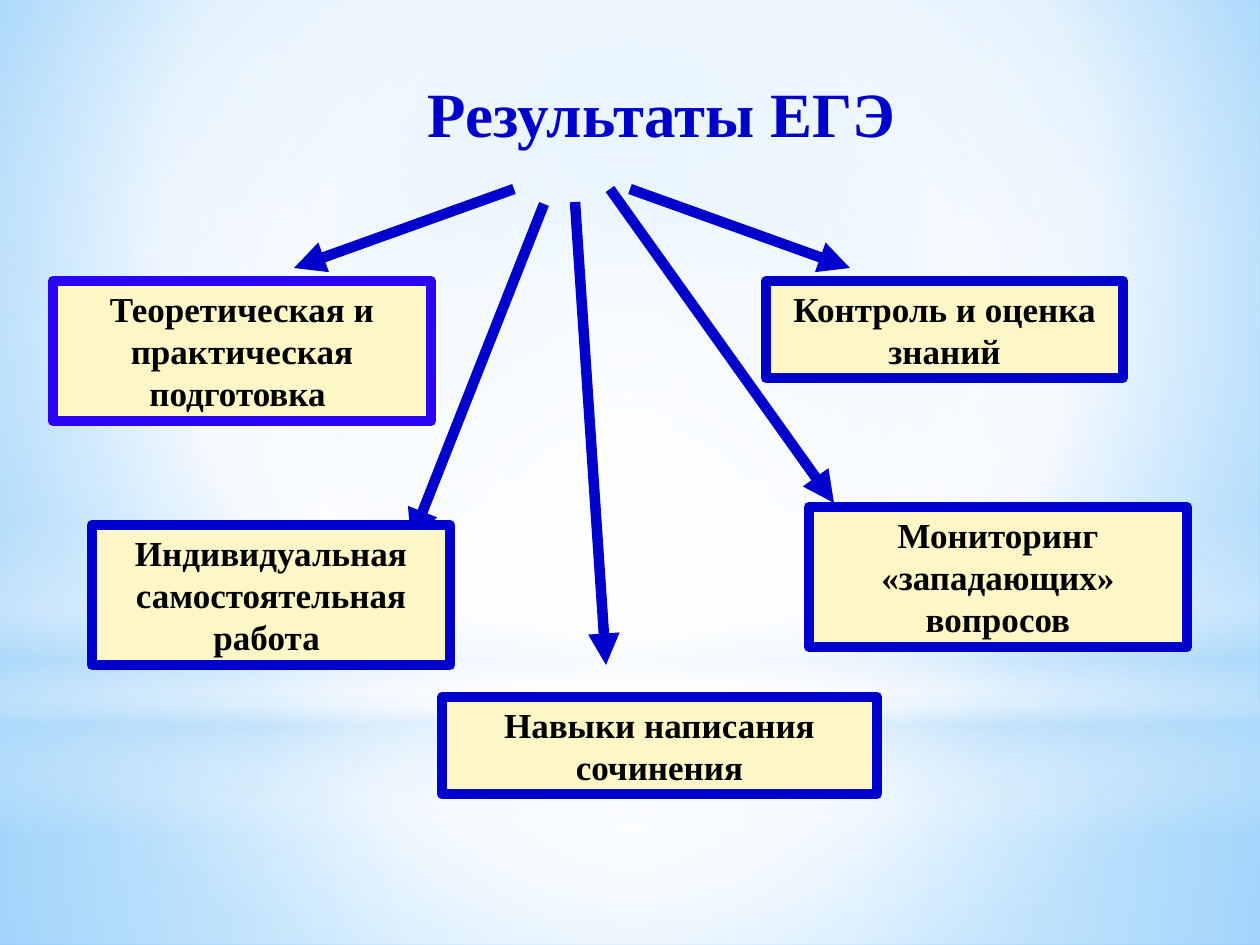
from lxml import etree
from pptx import Presentation
from pptx import util as u
from pptx.dml.color import RGBColor
from pptx.enum import shapes, text
from pptx.oxml import parse_xml
from pptx.oxml.ns import nsdecls, qn

PX = 914400 / 126
FONT = "Times New Roman"
COLORS = {"blue": "0000CC", "violet": "2B03F5", "cream": "FDF7C7", "black": "000000",
          "white": "FFFFFF", "pale": "B4DCFA", "sky": "9ED5FF", "deep": "5BB9FF"}


def gradient(stops, focus):
    marks = "".join(
        f'<a:gs pos="{pos * 1000}"><a:srgbClr val="{COLORS[color]}">'
        f'<a:alpha val="{alpha * 1000}"/></a:srgbClr></a:gs>'
        for pos, color, alpha in stops)
    if focus:
        sides = " ".join(f'{side}="{part * 1000}"' for side, part in zip("ltrb", focus))
        direction = f'<a:path path="circle"><a:fillToRect {sides}/></a:path>'
    else:
        direction = '<a:lin ang="5400000" scaled="0"/>'
    return parse_xml(f'<a:gradFill {nsdecls("a")} rotWithShape="1">'
                     f'<a:gsLst>{marks}</a:gsLst>{direction}</a:gradFill>')


def write(frame, words, size, color, formats):
    for key, value in formats.items():
        setattr(frame, key, value)
    paragraph = frame.paragraphs[0]
    paragraph.alignment = text.PP_ALIGN.CENTER
    run = paragraph.add_run()
    run.text = words
    for key, value in {"name": FONT, "size": u.Pt(size), "bold": True}.items():
        setattr(run.font, key, value)
    run.font.color.rgb = RGBColor.from_string(COLORS[color])


prs = Presentation()
prs.slide_width, prs.slide_height = round(1260 * PX), round(945 * PX)
slide = prs.slides.add_slide(prs.slide_layouts[5])

backdrop = slide.background.fill
backdrop.gradient()
old_fill = slide.background._cSld.find(".//" + qn("a:gradFill"))
old_fill.getparent().replace(old_fill, gradient(
    [(0, "sky", 100), (60, "white", 100), (100, "deep", 100)], (20, 10, 20, 60)))

RECT, OVAL = shapes.MSO_SHAPE.RECTANGLE, shapes.MSO_SHAPE.OVAL
CENTER = (50, 50, 50, 50)
glows = [
    (RECT, 703, 242, [(0, "white", 91), (37, "white", 76), (100, "pale", 79)], CENTER),
    (RECT, 0, 703, [(0, "white", 89), (48, "white", 62), (100, "pale", 79)], CENTER),
    (RECT, 519, 315, [(0, "white", 0), (29, "white", 30), (45, "pale", 40),
                      (55, "white", 26), (65, "pale", 60), (100, "white", 0)], None),
    (OVAL, 220, 703, [(0, "white", 100), (56, "white", 0)], CENTER),
]
for outline, top, height, stops, focus in glows:
    glow = slide.shapes.add_shape(outline, 0, round(top * PX), prs.slide_width, round(height * PX))
    glow.shadow.inherit = False
    glow.line.fill.background()
    glow.fill.gradient()
    old_fill = glow._element.spPr.find(qn("a:gradFill"))
    glow._element.spPr.replace(old_fill, gradient(stops, focus))

heading = slide.shapes.title
slide.shapes._spTree.append(heading._element)
for key, value in {"left": 126, "top": 60, "width": 1071, "height": 135}.items():
    setattr(heading, key, round(value * PX))
write(heading.text_frame, "Результаты ЕГЭ", 36, "blue",
      {"vertical_anchor": text.MSO_ANCHOR.TOP, "margin_top": round(14 * PX), "word_wrap": True,
       "auto_size": text.MSO_AUTO_SIZE.NONE})

arrows = [
    (514, 189, 294, 268),
    (544, 204, 411, 541),
    (630, 189, 850, 268),
    (610, 189, 834, 503),
    (575, 202, 606, 665),
]
for ends in arrows:
    arrow = slide.shapes.add_connector(shapes.MSO_CONNECTOR.STRAIGHT,
                                       *(round(end * PX) for end in ends))
    arrow.line.width = u.Pt(6)
    arrow.line.color.rgb = RGBColor.from_string(COLORS["blue"])
    etree.SubElement(arrow.line._get_or_add_ln(), qn("a:tailEnd"), type="triangle")
    etree.SubElement(arrow._element.spPr, qn("a:effectLst"))

factors = [
    ("Теоретическая и практическая подготовка ", 53, 281, 378, 140, "violet"),
    ("Контроль и оценка знаний", 766, 281, 357, 97, "blue"),
    ("Индивидуальная самостоятельная работа ", 92, 525, 358, 140, "blue"),
    ("Навыки написания сочинения", 442, 697, 435, 97, "blue"),
    ("Мониторинг «западающих» вопросов", 809, 507, 378, 140, "blue"),
]
for words, left, top, width, height, border in factors:
    factor = slide.shapes.add_shape(RECT, *(round(n * PX) for n in (left, top, width, height)))
    factor.shadow.inherit = False
    factor.fill.solid()
    factor.fill.fore_color.rgb = RGBColor.from_string(COLORS["cream"])
    factor.line.width = u.Pt(6)
    factor.line.color.rgb = RGBColor.from_string(COLORS[border])
    write(factor.text_frame, words, 20, "black",
          {"vertical_anchor": text.MSO_ANCHOR.TOP, "word_wrap": True,
           "auto_size": text.MSO_AUTO_SIZE.SHAPE_TO_FIT_TEXT})

prs.save("out.pptx")
